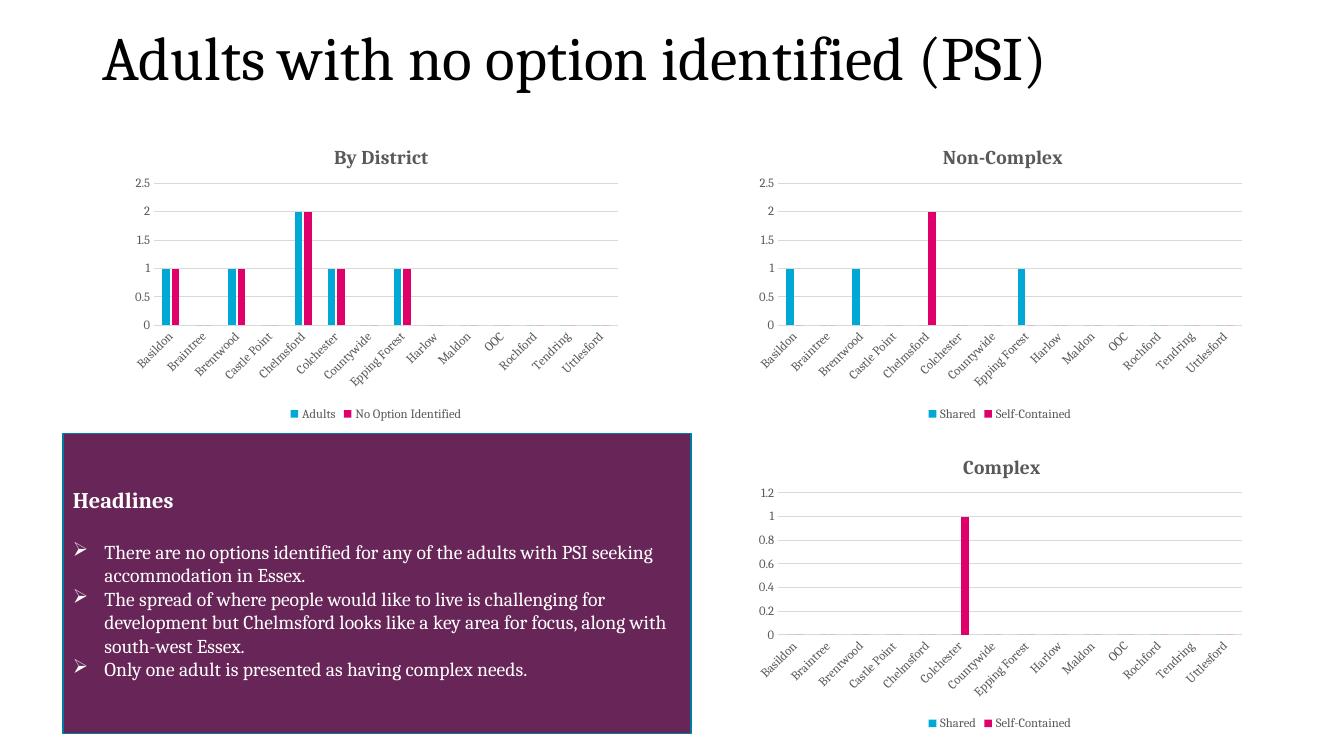
import pptx
import pptx.chart.data
import pptx.dml.color
import pptx.enum.chart
import pptx.enum.shapes
import pptx.enum.text
import pptx.oxml
import pptx.oxml.ns
import pptx.util
from dataclasses import dataclass

Pt = pptx.util.Pt
qn = pptx.oxml.ns.qn


@dataclass(frozen=True)
class Theme:
    font: str = "Cambria"
    black: str = "000000"
    white: str = "FFFFFF"
    panel: str = "682558"
    border: str = "007C9E"
    label: str = "595959"
    grid: str = "D9D9D9"
    series: tuple = ("00A8D6", "E00069")
    title_size: int = 44
    heading_size: int = 16
    body_size: int = 14
    chart_title_size: int = 14
    label_size: int = 9


DISTRICTS = ("Basildon", "Braintree", "Brentwood", "Castle Point", "Chelmsford",
             "Colchester", "Countywide", "Epping Forest", "Harlow", "Maldon",
             "OOC", "Rochford", "Tendring", "Uttlesford")
BY_DISTRICT = {"Basildon": 1, "Brentwood": 1, "Chelmsford": 2,
               "Colchester": 1, "Epping Forest": 1}
HOUSING = ("Shared", "Self-Contained")
LEFT_COLUMN, RIGHT_COLUMN = 88.5, 534.2
TOP_ROW, BOTTOM_ROW = 87.8, 308.9
CHART_WIDTH, CHART_HEIGHT = 360, 216
# title, left, top, left edge of the title as a share of the width, series
CHARTS = (
    ("Non-Complex", RIGHT_COLUMN, TOP_ROW, 0.38, dict(zip(HOUSING, (
        {"Basildon": 1, "Brentwood": 1, "Epping Forest": 1}, {"Chelmsford": 2})))),
    ("Complex", RIGHT_COLUMN, BOTTOM_ROW, 0.42, dict(zip(HOUSING, (
        {}, {"Colchester": 1})))),
    ("By District", LEFT_COLUMN, TOP_ROW, 0.41, {
        "Adults": BY_DISTRICT, "No Option Identified": BY_DISTRICT}),
)
HEADLINES = (
    "There are no options identified for any of the adults with PSI seeking "
    "accommodation in Essex.",
    "The spread of where people would like to live is challenging for development "
    "but Chelmsford looks like a key area for focus, along with south-west Essex.",
    "Only one adult is presented as having complex needs.",
)


def rgb(color):
    return pptx.dml.color.RGBColor.from_string(color)


def set_layout(element, index, target="", **shares):
    """Place a chart part by shares of the chart's size."""
    for old in element.findall(qn("c:layout")):
        element.remove(old)
    inner = f'<c:layoutTarget val="{target}"/>' if target else ""
    inner += "".join(f'<c:{key}Mode val="edge"/>' for key in "xy")
    inner += "".join(f'<c:{key} val="{share}"/>' for key, share in shares.items())
    element.insert(index, pptx.oxml.parse_xml(
        f'<c:layout {pptx.oxml.ns.nsdecls("c")}><c:manualLayout>{inner}'
        '</c:manualLayout></c:layout>'))


class SlideBuilder:
    def __init__(self, slide, theme):
        self.slide = slide
        self.theme = theme

    def style_font(self, font, size, color, bold=False):
        font.name = self.theme.font
        font.size = Pt(size)
        font.color.rgb = rgb(color)
        font.bold = bold

    def add_run(self, paragraph, text, size, color, bold=False):
        run = paragraph.add_run()
        run.text = text
        self.style_font(run.font, size, color, bold)

    def add_title(self, text, left, top, width, height):
        title = self.slide.shapes.title
        title.left, title.top, title.width, title.height = map(
            Pt, (left, top, width, height))
        title.text_frame.vertical_anchor = pptx.enum.text.MSO_ANCHOR.MIDDLE
        paragraph = title.text_frame.paragraphs[0]
        paragraph.alignment = pptx.enum.text.PP_ALIGN.LEFT
        paragraph.line_spacing = 0.9
        self.add_run(paragraph, text, self.theme.title_size, self.theme.black)

    def add_panel(self, heading, points, left, top, width, height):
        theme = self.theme
        panel = self.slide.shapes.add_shape(
            pptx.enum.shapes.MSO_SHAPE.RECTANGLE, *map(Pt, (left, top, width, height)))
        panel.shadow.inherit = False
        panel.fill.solid()
        panel.fill.fore_color.rgb = rgb(theme.panel)
        panel.line.color.rgb = rgb(theme.border)
        panel.line.width = Pt(1)
        frame = panel.text_frame
        frame.word_wrap = True
        frame.vertical_anchor = pptx.enum.text.MSO_ANCHOR.MIDDLE
        paragraph = frame.paragraphs[0]
        paragraph.alignment = pptx.enum.text.PP_ALIGN.LEFT
        paragraph.space_after = Pt(19)
        self.add_run(paragraph, heading, theme.heading_size, theme.white, bold=True)
        for point in points:
            self.add_bullet(frame.add_paragraph(), point)

    def add_bullet(self, paragraph, text):
        paragraph.alignment = pptx.enum.text.PP_ALIGN.LEFT
        properties = paragraph._p.get_or_add_pPr()
        indent = Pt(22.5)
        properties.set("marL", str(indent))
        properties.set("indent", str(-indent))
        properties.append(pptx.oxml.parse_xml(
            f'<a:buChar {pptx.oxml.ns.nsdecls("a")} char="➢"/>'))
        self.add_run(paragraph, text, self.theme.body_size, self.theme.white)

    def add_column_chart(self, title, left, top, title_share, series):
        theme = self.theme
        data = pptx.chart.data.CategoryChartData()
        data.categories = DISTRICTS
        for name, counts in series.items():
            data.add_series(name, [counts.get(district, 0) for district in DISTRICTS])
        chart = self.slide.shapes.add_chart(
            pptx.enum.chart.XL_CHART_TYPE.COLUMN_CLUSTERED,
            *map(Pt, (left, top, CHART_WIDTH, CHART_HEIGHT)), data).chart
        self.style_font(chart.font, 10, theme.black)

        chart.has_title = True
        self.add_run(chart.chart_title.text_frame.paragraphs[0], title,
                     theme.chart_title_size, theme.label, bold=True)
        chart.chart_title.include_in_layout = False
        set_layout(chart.chart_title._element, 1, x=title_share, y=0.06)
        set_layout(chart._chartSpace.chart.plotArea, 0, "inner",
                   x=0.06, y=0.2, w=0.92, h=0.47)

        chart.has_legend = True
        chart.legend.position = pptx.enum.chart.XL_LEGEND_POSITION.BOTTOM
        chart.legend.include_in_layout = False
        self.style_font(chart.legend.font, theme.label_size, theme.label)

        plot = chart.plots[0]
        plot.vary_by_categories = False
        plot.gap_width = 219
        plot.overlap = -27
        for column, color in zip(plot.series, theme.series):
            column.format.fill.solid()
            column.format.fill.fore_color.rgb = rgb(color)
        self.style_axes(chart)

    def style_axes(self, chart):
        theme = self.theme
        for axis in (chart.category_axis, chart.value_axis):
            axis.major_tick_mark = pptx.enum.chart.XL_TICK_MARK.NONE
            axis.minor_tick_mark = pptx.enum.chart.XL_TICK_MARK.NONE
            self.style_font(axis.tick_labels.font, theme.label_size, theme.label)
        chart.value_axis.format.line.fill.background()
        chart.value_axis.has_major_gridlines = True
        for part in (chart.category_axis, chart.value_axis.major_gridlines):
            part.format.line.color.rgb = rgb(theme.grid)
            part.format.line.width = Pt(0.75)
        body = chart.category_axis._element.find(f"{qn('c:txPr')}/{qn('a:bodyPr')}")
        body.set("rot", str(-45 * 60000))


def main():
    presentation = pptx.Presentation()
    presentation.slide_width, presentation.slide_height = Pt(960), Pt(540)
    slide = presentation.slides.add_slide(
        presentation.slide_layouts.get_by_name("Title Only"))
    builder = SlideBuilder(slide, Theme())
    builder.add_title("Adults with no option identified (PSI)", 66, 15, 828, 56)
    builder.add_panel("Headlines", HEADLINES, 45, 309.6, 448.5, 214.5)
    for chart in CHARTS:
        builder.add_column_chart(*chart)
    presentation.save("out.pptx")


if __name__ == "__main__":
    main()
